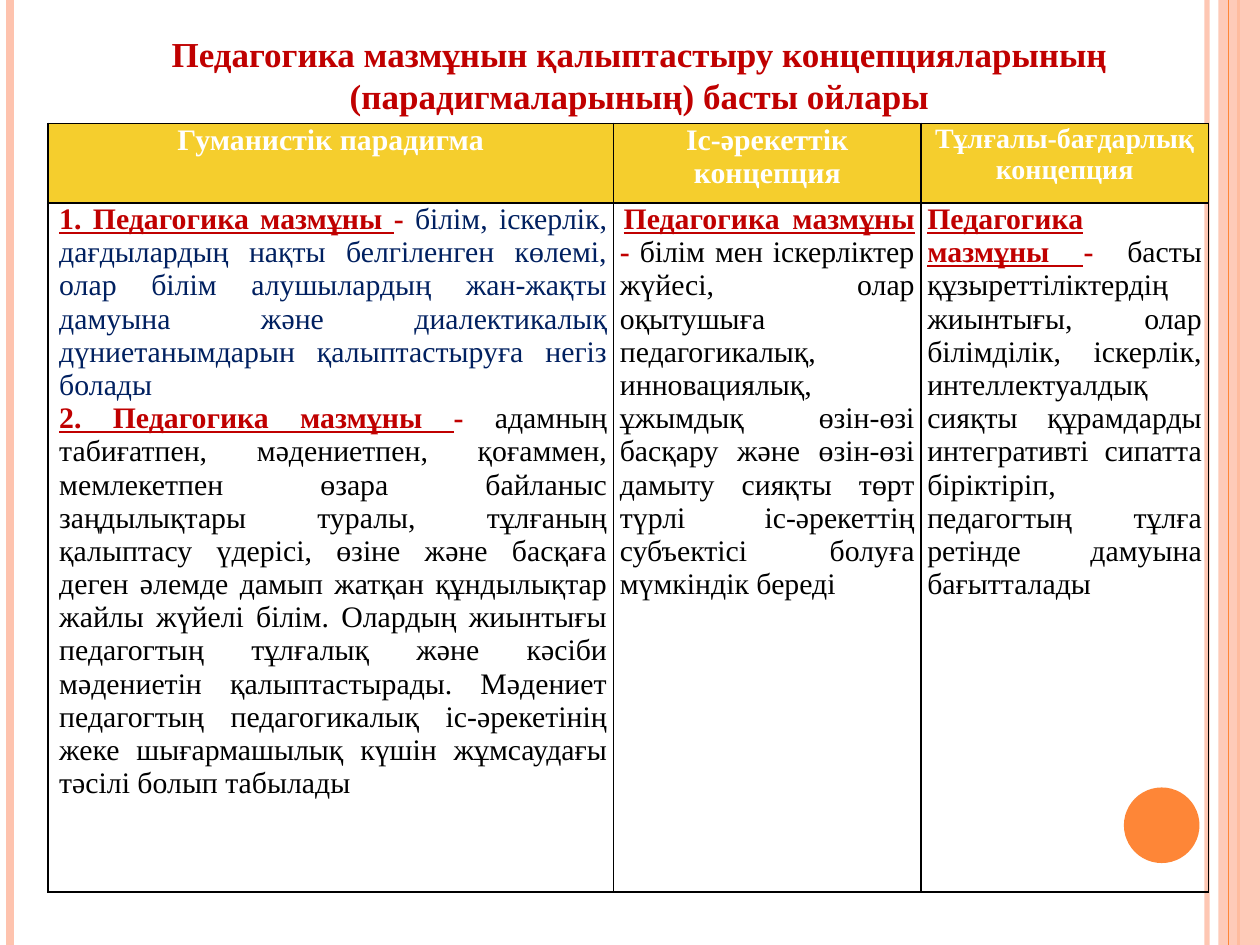
import pptx
import pptx.util
from dataclasses import dataclass
from lxml import etree
from pptx.dml.color import RGBColor
from pptx.enum.shapes import MSO_CONNECTOR, MSO_SHAPE
from pptx.enum.text import MSO_ANCHOR, PP_ALIGN
from pptx.oxml.ns import qn
from pptx.util import Inches


@dataclass(frozen=True)
class Theme:
    font: str = "Times New Roman"
    red: str = "C00000"
    navy: str = "002060"
    black: str = "000000"
    white: str = "FFFFFF"
    yellow: str = "F5CE2D"
    orange: str = "FE8637"
    peach: str = "FEC3AE"
    title_size: float = 20
    text_size: float = 17
    small_size: float = 16


THEME = Theme()
HEIGHT = 7.5
COLUMNS = [4.49, 2.44, 2.28]
ROWS = [0.63, 5.47]
HEADERS = [
    ("Гуманистік парадигма", THEME.text_size),
    ("Іс-әрекеттік концепция", THEME.text_size),
    ("Тұлғалы-бағдарлық концепция", THEME.small_size),
]
# Each definition: term, explanation, explanation colour, left margin, first-line indent
TERM = "Педагогика мазмұны "
DEFINITIONS = [
    [
        ("1. " + TERM, "білім, іскерлік, дағдылардың нақты белгіленген көлемі, олар білім "
         "алушылардың жан-жақты дамуына және диалектикалық дүниетанымдарын "
         "қалыптастыруға негіз болады ", THEME.navy, 0.04, 0),
        ("2. " + TERM, "адамның табиғатпен, мәдениетпен, қоғаммен, мемлекетпен өзара "
         "байланыс заңдылықтары туралы, тұлғаның қалыптасу үдерісі, өзіне және басқаға "
         "деген әлемде дамып жатқан құндылықтар жайлы жүйелі білім. Олардың жиынтығы "
         "педагогтың тұлғалық және кәсіби мәдениетін қалыптастырады. Мәдениет педагогтың "
         "педагогикалық іс-әрекетінің жеке шығармашылық күшін жұмсаудағы тәсілі болып "
         "табылады ", THEME.black, 0.04, 0),
    ],
    [
        (TERM, "білім мен іскерліктер жүйесі, олар оқытушыға педагогикалық, инновациялық, "
         "ұжымдық өзін-өзі басқару және өзін-өзі дамыту сияқты төрт түрлі іс-әрекеттің "
         "субъектісі болуға мүмкіндік береді ", THEME.black, 0, 0.03),
    ],
    [
        (TERM, "басты құзыреттіліктердің жиынтығы, олар білімділік, іскерлік, "
         "интеллектуалдық сияқты құрамдарды интегративті сипатта біріктіріп, педагогтың "
         "тұлға ретінде дамуына бағытталады ", THEME.black, 0, 0),
    ],
]


def rgb(color):
    return RGBColor.from_string(color)


def format_run(run, size, color, bold=True, underline=False):
    run.font.name = THEME.font
    run.font.size = pptx.util.Pt(size)
    run.font.color.rgb = rgb(color)
    run.font.bold = bold
    run.font.underline = underline


def set_opacity(fill_parent, percent):
    color = fill_parent.find(".//" + qn("a:srgbClr"))
    etree.SubElement(color, qn("a:alpha"), val=str(percent * 1000))


def add_stripe(slide, x, color, width, opacity=100):
    line = slide.shapes.add_connector(
        MSO_CONNECTOR.STRAIGHT, Inches(x), 0, Inches(x), Inches(HEIGHT))
    line.line.color.rgb = rgb(color)
    line.line.width = pptx.util.Pt(width)
    properties = line._element.spPr
    if opacity < 100:
        set_opacity(properties, opacity)
    etree.SubElement(properties, qn("a:effectLst"))


def add_plain_shape(slide, kind, bounds, color, opacity=100):
    shape = slide.shapes.add_shape(kind, *map(Inches, bounds))
    shape.shadow.inherit = False
    shape.fill.solid()
    shape.fill.fore_color.rgb = rgb(color)
    shape.line.fill.background()
    if opacity < 100:
        set_opacity(shape._element.spPr, opacity)


def add_title(slide, text):
    title = slide.shapes.title
    title.left, title.top, title.width, title.height = map(Inches, (0.39, 0.21, 9.37, 0.77))
    frame = title.text_frame
    frame.text = text
    frame.word_wrap = True
    frame.vertical_anchor = MSO_ANCHOR.TOP
    paragraph = frame.paragraphs[0]
    paragraph.alignment = PP_ALIGN.CENTER
    format_run(paragraph.runs[0], THEME.title_size, THEME.red)


def style_cell(cell, fill=None):
    cell.margin_left = cell.margin_right = Inches(0.05)
    cell.margin_top = cell.margin_bottom = 0
    properties = cell._tc.get_or_add_tcPr()
    for side in ("a:lnL", "a:lnR", "a:lnT", "a:lnB"):
        border = etree.SubElement(properties, qn(side), w=str(pptx.util.Pt(1)))
        solid = etree.SubElement(border, qn("a:solidFill"))
        etree.SubElement(solid, qn("a:srgbClr"), val=THEME.black)
    if fill:
        cell.fill.solid()
        cell.fill.fore_color.rgb = rgb(fill)
    else:
        cell.fill.background()


def fill_header(cell, text, size):
    style_cell(cell, THEME.yellow)
    cell.text_frame.text = text
    paragraph = cell.text_frame.paragraphs[0]
    paragraph.alignment = PP_ALIGN.CENTER
    format_run(paragraph.runs[0], size, THEME.white)


def fill_definitions(cell, definitions):
    style_cell(cell)
    frame = cell.text_frame
    for index, (term, explanation, color, margin, indent) in enumerate(definitions):
        paragraph = frame.add_paragraph() if index else frame.paragraphs[0]
        paragraph.alignment = PP_ALIGN.JUSTIFY
        properties = paragraph._p.get_or_add_pPr()
        properties.set("marL", str(Inches(margin)))
        properties.set("indent", str(Inches(indent)))
        for text, run_color, bold, underline in (
                (term, THEME.red, True, True),
                ("- ", THEME.red, True, False),
                (explanation, color, False, False)):
            run = paragraph.add_run()
            run.text = text
            format_run(run, THEME.text_size, run_color, bold, underline)


def add_concept_table(slide):
    table = slide.shapes.add_table(
        len(ROWS), len(COLUMNS), Inches(0.38), Inches(0.98),
        Inches(sum(COLUMNS)), Inches(sum(ROWS))).table
    table.horz_banding = False
    for row, height in zip(table.rows, ROWS):
        row.height = Inches(height)
    for index, width in enumerate(COLUMNS):
        table.columns[index].width = Inches(width)
        fill_header(table.cell(0, index), *HEADERS[index])
        fill_definitions(table.cell(1, index), DEFINITIONS[index])


def main():
    presentation = pptx.Presentation()
    presentation.slide_width = Inches(10)
    presentation.slide_height = Inches(HEIGHT)
    slide = presentation.slides.add_slide(presentation.slide_layouts[5])

    # Side stripes and circle
    add_stripe(slide, 9.58, THEME.peach, 3, 93)
    add_stripe(slide, 0.08, THEME.peach, 4.5)
    add_stripe(slide, 9.83, THEME.orange, 1.5)
    add_plain_shape(slide, MSO_SHAPE.RECTANGLE, (9.67, 0, 0.33, HEIGHT), THEME.peach, 87)
    add_stripe(slide, 9.75, THEME.orange, 0.75)
    add_plain_shape(slide, MSO_SHAPE.OVAL, (8.92, 6.25, 0.6, 0.6), THEME.orange)

    # Title and table of concepts
    add_title(slide, "Педагогика мазмұнын қалыптастыру концепцияларының "
                     "(парадигмаларының) басты ойлары")
    add_concept_table(slide)

    presentation.save("out.pptx")


if __name__ == "__main__":
    main()
